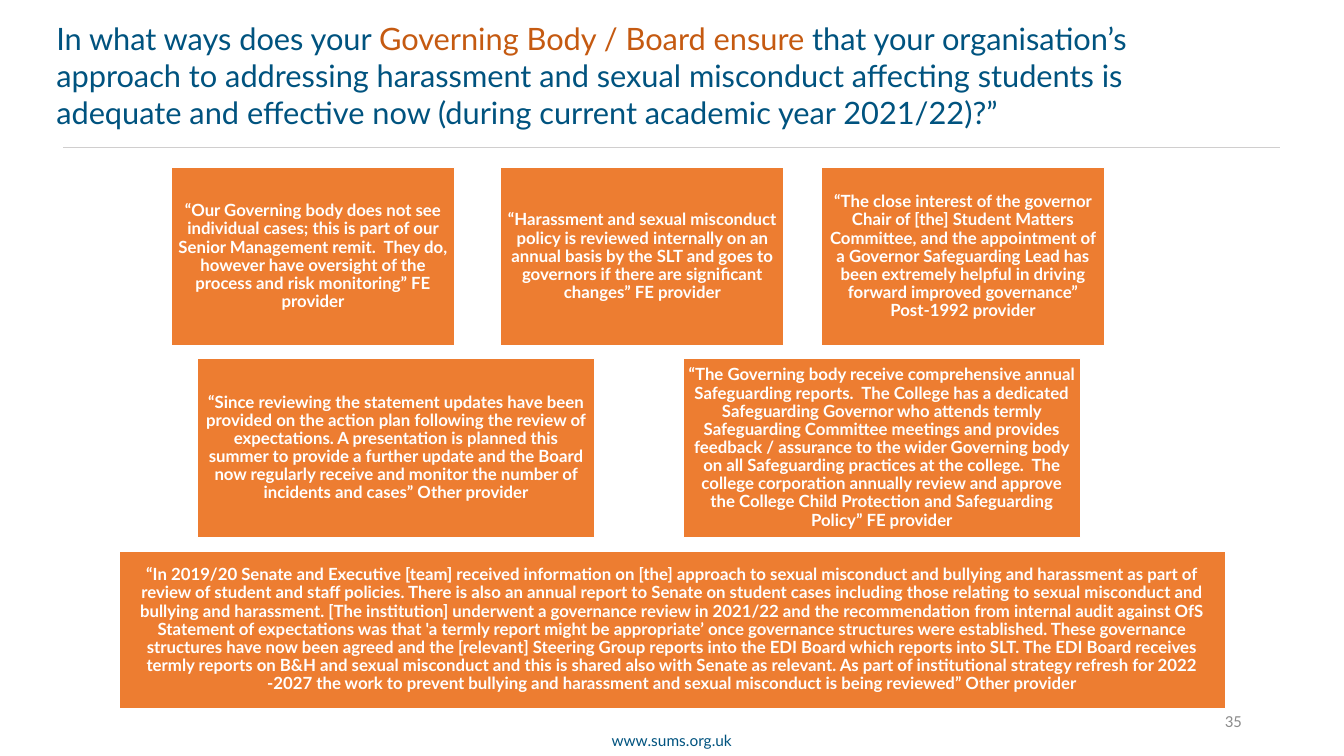
"""Build the slide of provider quotes on governing body assurance."""
from lxml.etree import SubElement
from pptx import Presentation
from pptx.dml.color import RGBColor
from pptx.enum.shapes import MSO_CONNECTOR, MSO_SHAPE
from pptx.enum.text import MSO_ANCHOR, PP_ALIGN
from pptx.oxml.ns import qn
from pptx.util import Cm, Pt

NAVY, RUST, ORANGE, WHITE, GREY, RULE = "00537F", "C55A11", "ED7D31", "FFFFFF", "8C8C8C", "D0CECE"

TITLE = [
    ("In what ways does your ", NAVY),
    ("Governing Body / Board ensure ", RUST),
    ("that your organisation’s approach to addressing harassment and sexual misconduct affecting "
     "students is adequate and effective now (during current academic year 2021/22)?”", NAVY),
]

QUOTE_ROWS = [
    {"top": 4.22, "width": 7.14, "height": 4.5, "quotes": [
        (4.32, ["“Our Governing body does not see individual cases; this is part of our Senior Management "
                "remit.  They do, however have oversight of the process and risk monitoring” FE provider"]),
        (12.62, ["“Harassment and sexual misconduct policy is reviewed internally on an annual basis by the "
                 "SLT and goes to governors if there are significant changes” FE provider"]),
        (20.7, ["“The close interest of the governor Chair of [the] Student Matters Committee, and the "
                "appointment of a Governor Safeguarding Lead has been extremely helpful in driving forward "
                "improved governance” Post-1992 provider"]),
    ]},
    {"top": 9.04, "width": 10.01, "height": 4.5, "quotes": [
        (4.98, ["“Since reviewing the statement updates have been provided on the action plan following the "
                "review of expectations. A presentation is planned this summer to provide a further update "
                "and the Board now regularly receive and monitor the number of incidents and cases” Other "
                "provider"]),
        (17.22, ["“The Governing body receive comprehensive annual Safeguarding reports.  The College has a "
                 "dedicated Safeguarding Governor who attends termly Safeguarding Committee meetings and "
                 "provides feedback / assurance to the wider Governing body on all Safeguarding practices "
                 "at the college.  The college corporation annually review and approve the College Child "
                 "Protection and Safeguarding Policy” FE provider"]),
    ]},
    {"top": 13.89, "width": 27.89, "height": 3.96, "quotes": [
        (3.0, ["“In 2019/20 Senate and Executive [team] received information on [the] approach to sexual "
               "misconduct and bullying and harassment as part of review of student and staff policies.",
               "There is also an annual report to Senate on student cases including those relating to sexual "
               "misconduct and bullying and harassment.",
               "[The institution] underwent a governance review in 2021/22 and the recommendation from "
               "internal audit against OfS Statement of expectations was that 'a termly report might be "
               "appropriate’ once governance structures were established.",
               "These governance structures have now been agreed and the [relevant] Steering Group reports "
               "into the EDI Board which reports into SLT.",
               "The EDI Board receives termly reports on B&H and sexual misconduct and this is shared also "
               "with Senate as relevant.",
               "As part of institutional strategy refresh for 2022 -2027 the work to prevent bullying and "
               "harassment and sexual misconduct is being reviewed” Other provider"]),
    ]},
]

TITLE_FONT = {"name": "Lato", "size": Pt(22)}
QUOTE_FONT = {"name": "Lato", "size": Pt(12), "bold": True}
FOOTER_FONT = {"name": "Lato", "size": Pt(11)}
NUMBER_FONT = {"name": "Calibri", "size": Pt(12)}
QUOTE_FRAME = {"word_wrap": True, "vertical_anchor": MSO_ANCHOR.MIDDLE} | {
    f"margin_{side}": Cm(0.13) for side in ("left", "top", "right", "bottom")}
QUOTE_PARAGRAPH = {"alignment": PP_ALIGN.CENTER, "line_spacing": 0.9}


def color(value):
    """Turn a hex string into a colour."""
    return RGBColor.from_string(value)


def apply(target, values):
    """Set each attribute named in a dict."""
    for name, value in values.items():
        setattr(target, name, value)


def write(shape, runs, font, frame, paragraph_format):
    """Write one paragraph of coloured runs into a shape."""
    apply(shape.text_frame, frame)
    paragraph = shape.text_frame.paragraphs[0]
    apply(paragraph, paragraph_format)
    for text, hex_color in runs:
        run = paragraph.add_run()
        run.text = text
        apply(run.font, font)
        run.font.color.rgb = color(hex_color)


def add_text(slide, box, runs, font, anchor, alignment):
    """Add a wrapped text box."""
    shape = slide.shapes.add_textbox(*map(Cm, box))
    write(shape, runs, font, {"word_wrap": True, "vertical_anchor": anchor}, {"alignment": alignment})


def add_rule(slide, left, right, top):
    """Add the thin line under the title."""
    rule = slide.shapes.add_connector(MSO_CONNECTOR.STRAIGHT, Cm(left), Cm(top), Cm(right), Cm(top))
    rule.line.color.rgb = color(RULE)
    rule.line.width = Pt(0.5)
    SubElement(rule.element.spPr, qn("a:effectLst"))


def add_quote(slide, box, text):
    """Add an orange quote panel."""
    panel = slide.shapes.add_shape(MSO_SHAPE.RECTANGLE, *map(Cm, box))
    panel.shadow.inherit = False
    panel.fill.solid()
    panel.fill.fore_color.rgb = color(ORANGE)
    panel.line.color.rgb = color(WHITE)
    panel.line.width = Pt(1)
    write(panel, [(text, WHITE)], QUOTE_FONT, QUOTE_FRAME, QUOTE_PARAGRAPH)


def main():
    """Assemble and save the slide."""
    presentation = Presentation()
    apply(presentation, {"slide_width": Cm(33.87), "slide_height": Cm(19.05)})
    slide = presentation.slides.add_slide(presentation.slide_layouts[6])
    add_rule(slide, 1.6, 32.26, 3.71)
    add_text(slide, (15.09, 18.31, 3.68, 0.74), [("www.sums.org.uk", NAVY)], FOOTER_FONT,
             MSO_ANCHOR.TOP, PP_ALIGN.CENTER)
    add_text(slide, (23.93, 17.65, 7.62, 1.02), [("35", GREY)], NUMBER_FONT,
             MSO_ANCHOR.MIDDLE, PP_ALIGN.RIGHT)
    add_text(slide, (1.17, 0.38, 29.11, 3.02), TITLE, TITLE_FONT, MSO_ANCHOR.TOP, PP_ALIGN.LEFT)
    for row in QUOTE_ROWS:
        for left, sentences in row["quotes"]:
            add_quote(slide, (left, row["top"], row["width"], row["height"]), " ".join(sentences))
    presentation.save("out.pptx")


if __name__ == "__main__":
    main()
